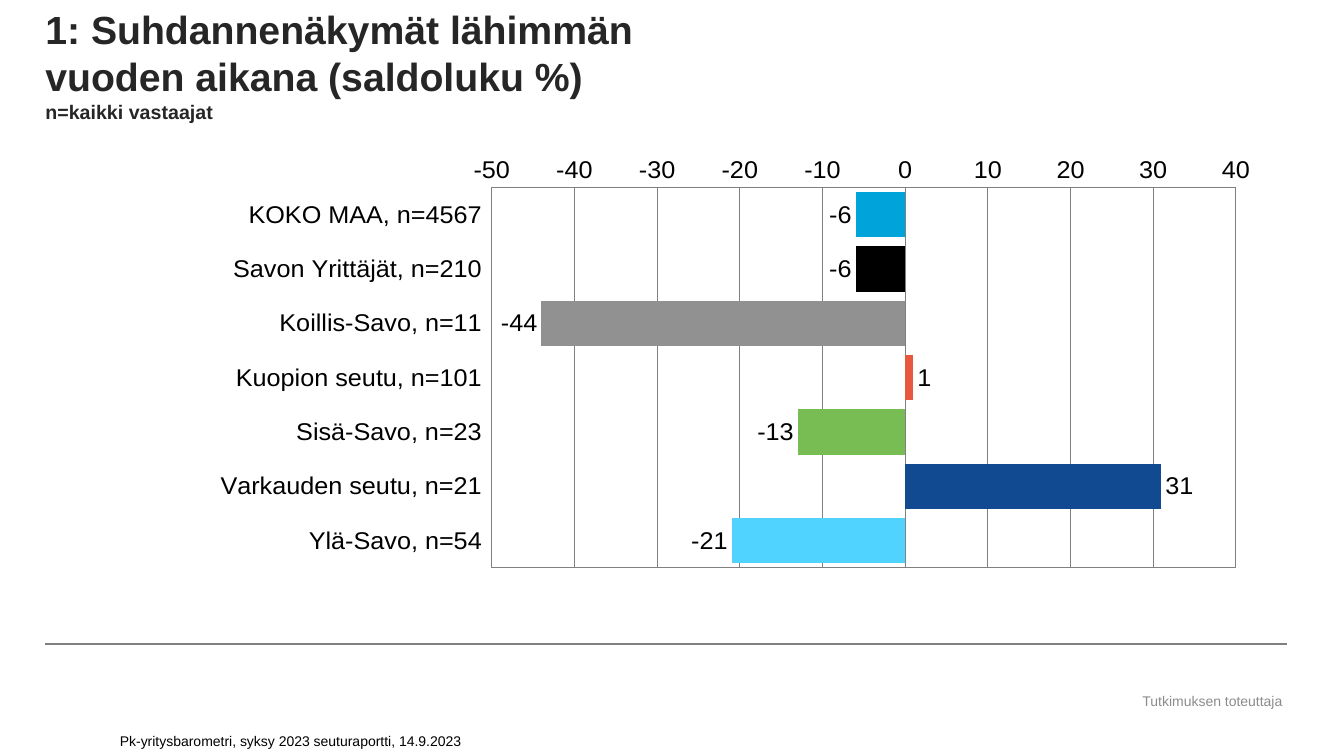
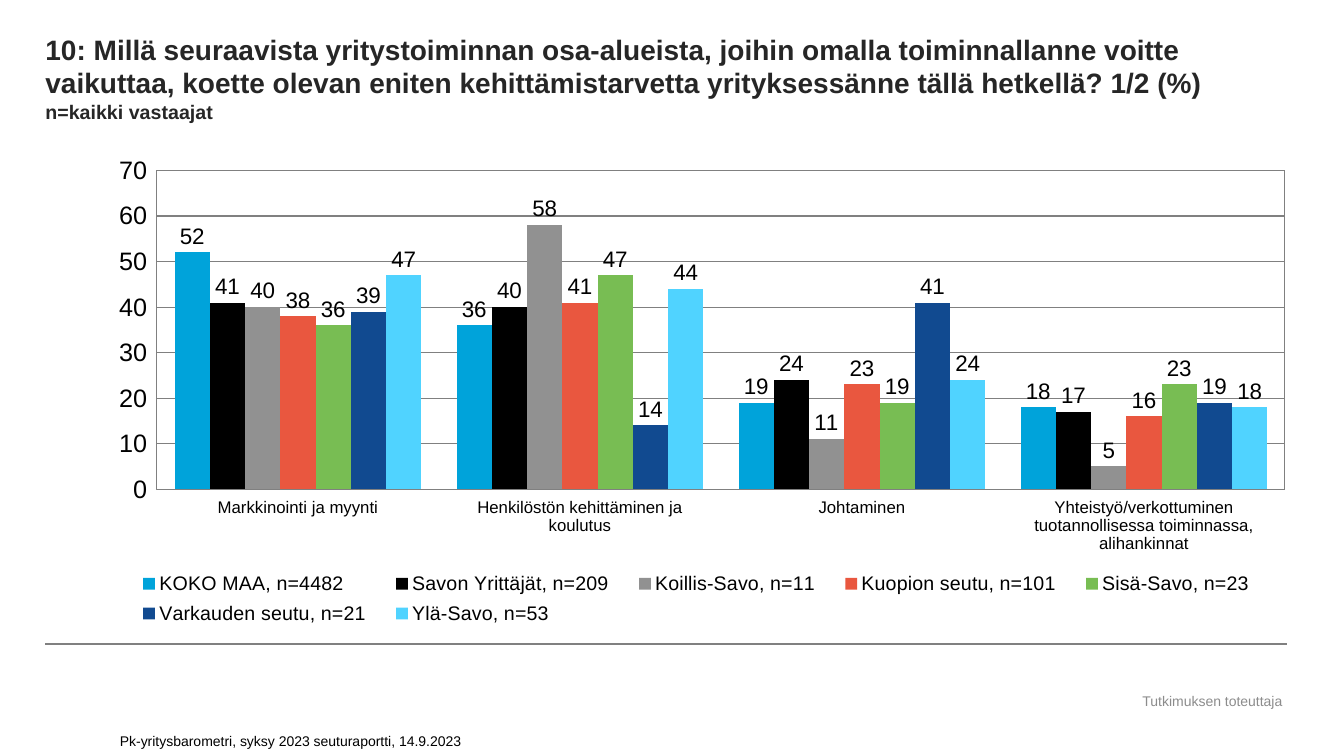
from pptx import Presentation
from pptx.chart.data import CategoryChartData
from pptx.dml.color import RGBColor
from pptx.enum.chart import XL_AXIS_CROSSES, XL_CHART_TYPE, XL_LABEL_POSITION
from pptx.enum.chart import XL_LEGEND_POSITION, XL_TICK_LABEL_POSITION, XL_TICK_MARK
from pptx.enum.shapes import MSO_CONNECTOR
from pptx.enum.text import MSO_ANCHOR, MSO_AUTO_SIZE, PP_ALIGN
from pptx.oxml import parse_xml
from pptx.oxml.ns import nsdecls, qn
from pptx.util import Inches, Pt

FONT = "Arial"
HEX = {"title": "262626", "text": "000000", "label": "8C8C8C", "line": "808080"}
AREAS = {
    "KOKO MAA": "00A3DA",
    "Savon Yrittäjät": "000000",
    "Koillis-Savo": "919191",
    "Kuopion seutu": "E9573F",
    "Sisä-Savo": "78BD53",
    "Varkauden seutu": "114A90",
    "Ylä-Savo": "50D3FF",
}
HEAD = (0.45, 0, 12.3, 1.22)
BODY = (0.45, 1.55, 12.3, 4.72)
RULE = (0.45, 6.39, 12.76, 6.39)
BADGE = (11.16, 6.82, 1.73, 0.26)
FOOT = (1.09, 7.13, 5.41, 0.35)


def rgb(name):
    """Return the colour for a name in HEX or for a hex string."""
    return RGBColor.from_string(HEX.get(name, name))


def style(font, size, tone="text", bold=False):
    """Set font name, size, colour and weight."""
    font.name, font.size, font.bold = FONT, Pt(size), bold
    font.color.rgb = rgb(tone)


def title(slide, box, lines, size):
    """Fill the title placeholder with heading lines and the base note."""
    head = slide.shapes.title
    head.left, head.top, head.width, head.height = map(Inches, box)
    frame = head.text_frame
    frame.auto_size, frame.word_wrap = MSO_AUTO_SIZE.NONE, True
    frame.vertical_anchor = MSO_ANCHOR.BOTTOM
    frame.margin_left = frame.margin_right = 0
    frame.margin_top = frame.margin_bottom = 0
    para = frame.paragraphs[0]
    para.alignment = PP_ALIGN.LEFT
    for line in lines:
        run = para.add_run()
        run.text = line
        style(run.font, size, "title", True)
        para.add_line_break()
    note = para.add_run()
    note.text = "n=kaikki vastaajat"
    style(note.font, 14, "title", True)


def label(slide, box, text, tone, align, anchor):
    """Add a small line of text."""
    frame = slide.shapes.add_textbox(*map(Inches, box)).text_frame
    frame.word_wrap, frame.vertical_anchor = True, anchor
    para = frame.paragraphs[0]
    para.alignment = align
    run = para.add_run()
    run.text = text
    style(run.font, 10, tone)


def footer(slide):
    """Add the rule, the badge and the source line."""
    rule = slide.shapes.add_connector(MSO_CONNECTOR.STRAIGHT, *map(Inches, RULE))
    rule.line.color.rgb, rule.line.width = rgb("line"), Pt(1.5)
    rule._element.spPr.append(parse_xml(f"<a:effectLst {nsdecls('a')}/>"))
    label(slide, BADGE, "Tutkimuksen toteuttaja", "label",
          PP_ALIGN.CENTER, MSO_ANCHOR.MIDDLE)
    label(slide, FOOT, "Pk-yritysbarometri, syksy 2023 seuturaportti, 14.9.2023",
          "text", PP_ALIGN.LEFT, MSO_ANCHOR.BOTTOM)


def layout(x, y, w, h, inner=True):
    """Build a manual layout element from fractions of the chart."""
    parts = {"xMode": "edge", "yMode": "edge", "x": x, "y": y, "w": w, "h": h}
    if inner:
        parts = {"layoutTarget": "inner", **parts}
    body = "".join(f'<c:{k} val="{v}"/>' for k, v in parts.items())
    return parse_xml(f"<c:layout {nsdecls('c')}><c:manualLayout>{body}"
                     "</c:manualLayout></c:layout>")


def place(node, spot, index):
    """Put a layout element into a chart part."""
    for old in node.findall(qn("c:layout")):
        node.remove(old)
    node.insert(index, spot)


def legend(chart, spot):
    """Add the legend at a spot in the chart."""
    chart.has_legend = True
    key = chart.legend
    key.position, key.include_in_layout = XL_LEGEND_POSITION.RIGHT, False
    style(key.font, 14)
    place(key._element, layout(*spot, inner=False), 1)


def bars(slide, box, kind, cats, rows, span, gap, plot, size):
    """Add a bar chart with shared axes, grid and labels."""
    data = CategoryChartData(number_format="#,##0")
    data.categories = cats
    for name, vals in rows:
        data.add_series(name, vals)
    chart = slide.shapes.add_chart(kind, *map(Inches, box), data).chart
    chart.has_title = chart.has_legend = False
    style(chart.font, 18)
    cat, val = chart.category_axis, chart.value_axis
    for axis in (cat, val):
        axis.major_tick_mark = axis.minor_tick_mark = XL_TICK_MARK.NONE
        axis.tick_label_position = XL_TICK_LABEL_POSITION.LOW
        axis.format.line.color.rgb = rgb("line")
        axis.format.line.width = Pt(0.75)
    val.minimum_scale, val.maximum_scale, val.major_unit = *span, 10
    val.has_major_gridlines = True
    grid = val.major_gridlines.format.line
    grid.color.rgb, grid.width = rgb("line"), Pt(0.75)
    group = chart.plots[0]
    group.gap_width, group.overlap, group.vary_by_categories = gap, 0, False
    group.has_data_labels = True
    tags = group.data_labels
    tags.show_value, tags.position = True, XL_LABEL_POSITION.OUTSIDE_END
    tags.number_format, tags.number_format_is_linked = "#,##0", False
    style(tags.font, size)
    for item, tone in zip(group.series, AREAS.values()):
        item.invert_if_negative = False
        item.format.fill.solid()
        item.format.fill.fore_color.rgb = rgb(tone)
    area = chart._chartSpace.find(".//" + qn("c:plotArea"))
    place(area, layout(*plot), 0)
    area.append(parse_xml(
        f"<c:spPr {nsdecls('c', 'a')}><a:noFill/><a:ln w=\"9525\"><a:solidFill>"
        f"<a:srgbClr val=\"{HEX['line']}\"/></a:solidFill></a:ln></c:spPr>"))
    return chart


def named(counts):
    """Join area names with their numbers of answers."""
    return [f"{name}, n={n}" for name, n in zip(AREAS, counts)]


def start(deck, lines, size):
    """Add a slide with title and footer."""
    slide = deck.slides.add_slide(deck.slide_layouts[5])
    title(slide, HEAD, lines, size)
    footer(slide)
    return slide


def outlook(deck):
    """Build the slide on the business outlook."""
    slide = start(deck, ["1: Suhdannenäkymät lähimmän",
                         "vuoden aikana (saldoluku %)"], 28)
    cats = named((4567, 210, 11, 101, 23, 21, 54))
    rows = [("Saldoluku", (-6, -6, -44, 1, -13, 31, -21))]
    chart = bars(slide, BODY, XL_CHART_TYPE.BAR_CLUSTERED, cats, rows,
                 (-50, 40), 20, (0.36, 0.03, 0.6, 0.83), 18)
    chart.category_axis.reverse_order = True
    chart.category_axis.crosses = XL_AXIS_CROSSES.MAXIMUM
    chart.value_axis.tick_label_position = XL_TICK_LABEL_POSITION.NEXT_TO_AXIS
    for i, tone in enumerate(AREAS.values()):
        fill = chart.plots[0].series[0].points[i].format.fill
        fill.solid()
        fill.fore_color.rgb = rgb(tone)


def needs(deck):
    """Build the slide on development needs."""
    slide = start(deck, [
        "10: Millä seuraavista yritystoiminnan osa-alueista, joihin omalla "
        "toiminnallanne voitte vaikuttaa, koette olevan eniten "
        "kehittämistarvetta yrityksessänne tällä hetkellä? 1/2 (%)"], 20)
    cats = ["Markkinointi ja myynti", "Henkilöstön kehittäminen ja koulutus",
            "Johtaminen",
            "Yhteistyö/verkottuminen tuotannollisessa toiminnassa, alihankinnat"]
    vals = [(52, 36, 19, 18), (41, 40, 24, 17), (40, 58, 11, 5),
            (38, 41, 23, 16), (36, 47, 19, 23), (39, 14, 41, 19),
            (47, 44, 24, 18)]
    rows = zip(named((4482, 209, 11, 101, 23, 21, 53)), vals)
    chart = bars(slide, BODY, XL_CHART_TYPE.COLUMN_CLUSTERED, cats, rows,
                 (0, 70), 100, (0.09, 0.03, 0.91, 0.67), 16)
    style(chart.category_axis.tick_labels.font, 12)
    legend(chart, (0.06, 0.86, 0.93, 0.14))


def main():
    """Build and save the deck."""
    deck = Presentation()
    deck.slide_width, deck.slide_height = Inches(13.33), Inches(7.5)
    outlook(deck)
    needs(deck)
    deck.save("out.pptx")


if __name__ == "__main__":
    main()
